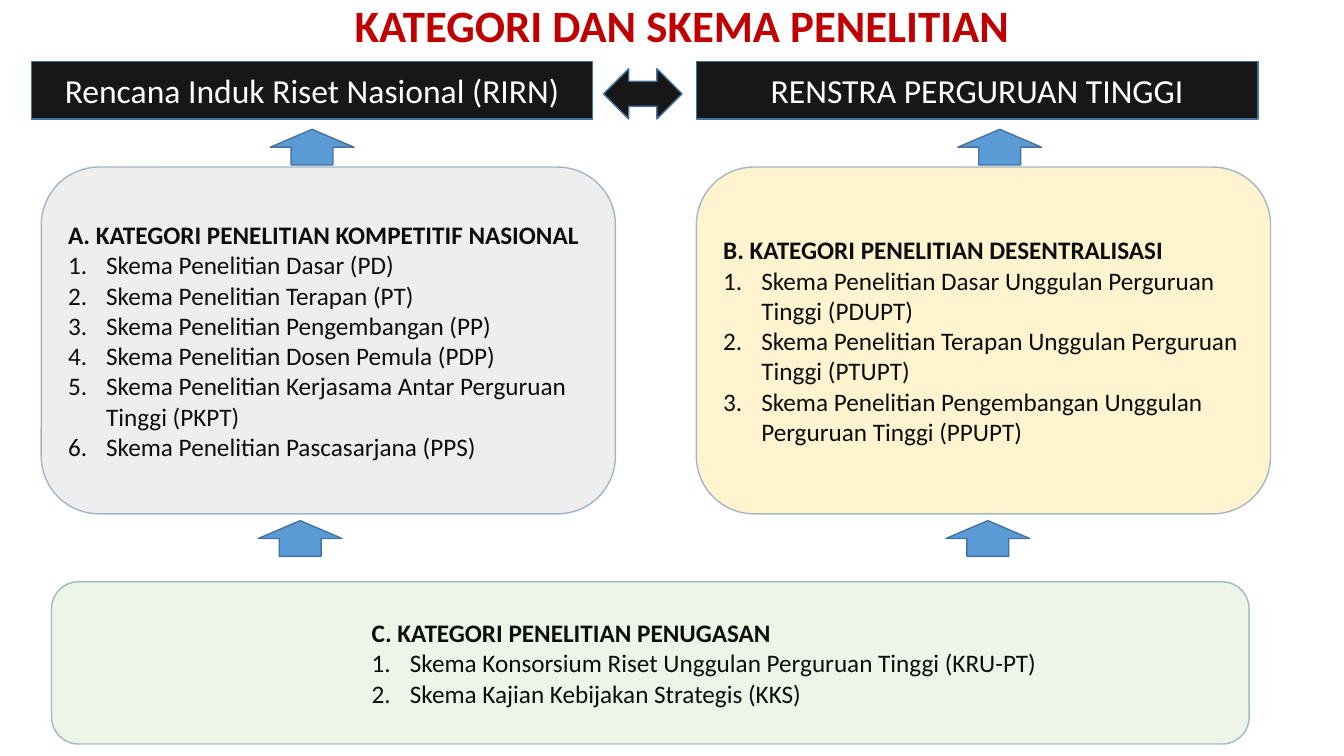
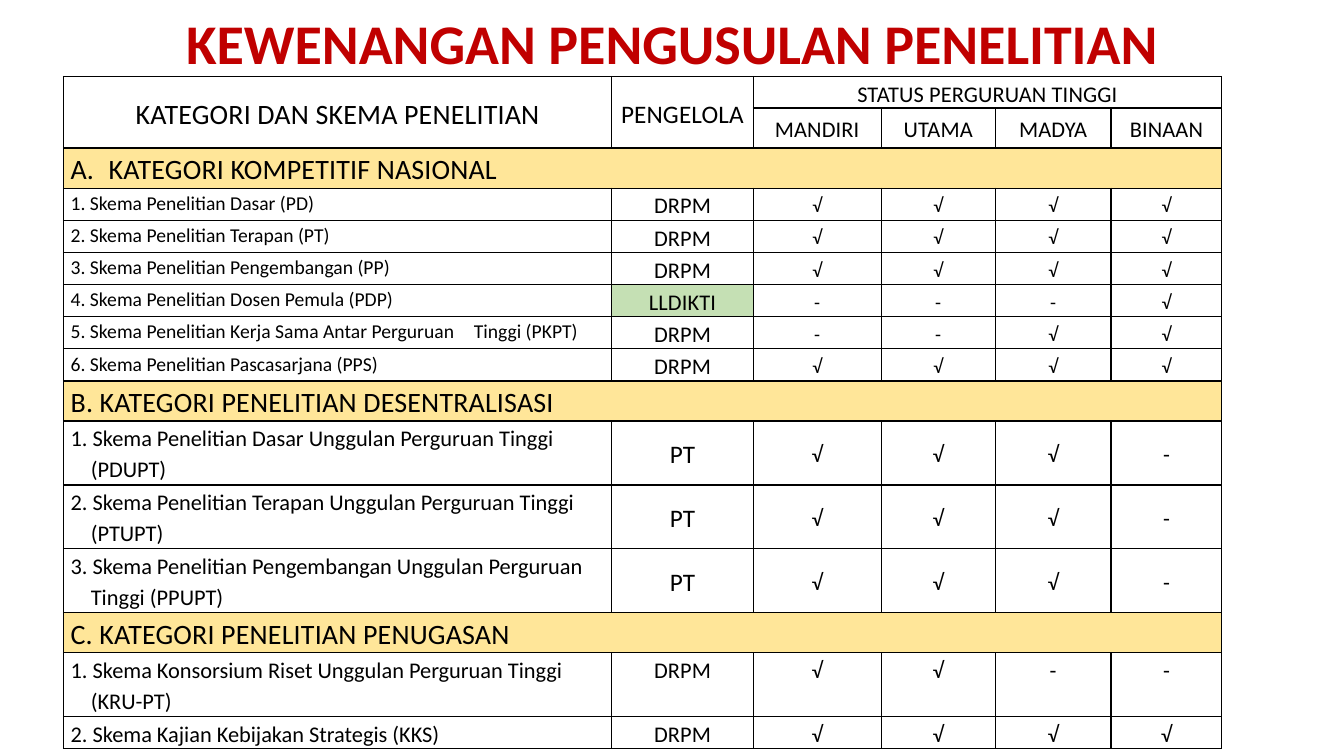
from lxml.etree import SubElement
from pptx import Presentation
from pptx.dml.color import RGBColor
from pptx.enum.shapes import MSO_SHAPE
from pptx.enum.text import MSO_ANCHOR, PP_ALIGN
from pptx.oxml.ns import qn
from pptx.util import Cm, Pt

FONT = "Calibri"
COLORS = {
    "title": "C00000", "black": "000000", "ink": "0D0D0D", "white": "FFFFFF",
    "plan": "181717", "outline": "43739E", "card_outline": "41719C", "arrow": "5B9BD5",
    "competitive": "C9C9C9", "decentralised": "FFD966", "assigned": "C5E0B4",
    "category": "FFE699",
}
LIST_INDENT = 0.96

COMPETITIVE = [
    "Skema Penelitian Dasar (PD)",
    "Skema Penelitian Terapan (PT)",
    "Skema Penelitian Pengembangan (PP)",
    "Skema Penelitian Dosen Pemula (PDP)",
    "Skema Penelitian Kerjasama Antar Perguruan Tinggi (PKPT)",
    "Skema Penelitian Pascasarjana (PPS)",
]
DECENTRALISED = [
    "Skema Penelitian Dasar Unggulan Perguruan Tinggi (PDUPT)",
    "Skema Penelitian Terapan Unggulan Perguruan Tinggi (PTUPT)",
    "Skema Penelitian Pengembangan Unggulan Perguruan Tinggi (PPUPT)",
]
ASSIGNED = [
    "Skema Konsorsium Riset Unggulan Perguruan Tinggi (KRU-PT)",
    "Skema Kajian Kebijakan Strategis (KKS)",
]
JOINT_SCHEME = "Skema Penelitian Kerja Sama Antar Perguruan\tTinggi (PKPT)"

CATEGORIES = [
    dict(heading="KATEGORI KOMPETITIF NASIONAL", numbering="alphaUcPeriod",
         sizes=(14, 16, 14), hanging=0, anchor=MSO_ANCHOR.MIDDLE,
         schemes=COMPETITIVE[:4] + [JOINT_SCHEME] + COMPETITIVE[5:],
         managers=["DRPM"] * 3 + ["LLDIKTI"] + ["DRPM"] * 2,
         marks=["√√√√"] * 3 + ["---√", "--√√", "√√√√"],
         heights=[0.81] * 6),
    dict(heading="B. KATEGORI PENELITIAN DESENTRALISASI", numbering=None,
         sizes=(16, 18, 16), hanging=0.51, anchor=MSO_ANCHOR.MIDDLE,
         schemes=DECENTRALISED, managers=["PT"] * 3, marks=["√√√-"] * 3,
         heights=[1.61] * 3),
    dict(heading="C. KATEGORI PENELITIAN PENUGASAN", numbering=None,
         sizes=(16, 16, 16), hanging=0.51, anchor=MSO_ANCHOR.TOP,
         schemes=ASSIGNED, managers=["DRPM"] * 2, marks=["√√--", "√√√√"],
         heights=[1.61, 0.81]),
]


def rgb(name):
    return RGBColor.from_string(COLORS[name])


def add_text(frame, text, size=18, color="ink", bold=False, align=PP_ALIGN.LEFT,
             line_spacing=None, left=0, hanging=0, numbering=None, tab=None, tracking=0):
    paragraph = frame.paragraphs[0]
    if paragraph.runs:
        paragraph = frame.add_paragraph()
    paragraph.alignment = align
    if line_spacing:
        paragraph.line_spacing = line_spacing
    properties = paragraph._p.get_or_add_pPr()
    properties.set("marL", str(Cm(left + hanging)))
    properties.set("indent", str(-Cm(hanging)))
    if numbering:
        SubElement(properties, qn("a:buFont"), typeface="+mj-lt")
        SubElement(properties, qn("a:buAutoNum"), type=numbering)
    if tab:
        tabs = SubElement(properties, qn("a:tabLst"))
        SubElement(tabs, qn("a:tab"), pos=str(Cm(tab)), algn="l")
    run = paragraph.add_run()
    run.text = text
    run.font.name = FONT
    run.font.size = Pt(size)
    run.font.bold = bold
    run.font.color.rgb = rgb(color)
    if tracking:
        run._r.get_or_add_rPr().set("spc", str(tracking))


def set_opacity(fill_parent, percent):
    color = fill_parent.find(qn("a:solidFill")).find(qn("a:srgbClr"))
    SubElement(color, qn("a:alpha"), val=str(percent * 1000))


def add_block(slide, preset, box, fill, outline="outline"):
    block = slide.shapes.add_shape(preset, *map(Cm, box))
    block.shadow.inherit = False
    block.fill.solid()
    block.fill.fore_color.rgb = rgb(fill)
    block.line.color.rgb = rgb(outline)
    block.line.width = Pt(1)
    block.text_frame.word_wrap = True
    block.text_frame.vertical_anchor = MSO_ANCHOR.MIDDLE
    return block


def add_title(slide, box, text, size):
    frame = slide.shapes.add_textbox(*map(Cm, box)).text_frame
    frame.word_wrap = True
    add_text(frame, text, size=size, color="title", bold=True,
             align=PP_ALIGN.CENTER, line_spacing=0.9)


def add_category_card(slide, box, fill, heading, schemes, left=0):
    card = add_block(slide, MSO_SHAPE.ROUNDED_RECTANGLE, box, fill, "card_outline")
    set_opacity(card._element.spPr, 30)
    set_opacity(card.line._ln, 47)
    add_text(card.text_frame, heading, bold=True, left=left)
    for scheme in schemes:
        add_text(card.text_frame, scheme, left=left, hanging=LIST_INDENT,
                 numbering="arabicPeriod")


def add_plan_column(slide, box, plan, card_left, arrow_left, fill, heading, schemes):
    left, top, width, height = box
    header = add_block(slide, MSO_SHAPE.RECTANGLE, (left, top, width, 1.45), "plan")
    add_text(header.text_frame, plan, size=24, color="white", align=PP_ALIGN.CENTER)
    add_category_card(slide, (left + card_left, top + 2.66, 14.47, 8.74),
                      fill, heading, schemes)
    for shift, arrow_top in ((0.3, top + 1.71), (0, top + height - 0.9)):
        add_block(slide, MSO_SHAPE.UP_ARROW,
                  (left + arrow_left + shift, arrow_top, 2.11, 0.9), "arrow")


def build_scheme_slide(slide):
    add_title(slide, (2.59, -0.03, 29.21, 1.24), "KATEGORI DAN SKEMA PENELITIAN", 32)
    add_category_card(slide, (1.3, 14.66, 30.18, 4.09), "assigned",
                      "C. KATEGORI PENELITIAN PENUGASAN", ASSIGNED, left=7.62)
    add_plan_column(slide, (0.79, 1.55, 14.15, 12.47),
                    "Rencana Induk Riset Nasional (RIRN)", 0.25, 5.72, "competitive",
                    "A. KATEGORI PENELITIAN KOMPETITIF NASIONAL", COMPETITIVE)
    add_plan_column(slide, (17.55, 1.55, 14.15, 12.47),
                    "RENSTRA PERGURUAN TINGGI", 0, 6.29, "decentralised",
                    "B. KATEGORI PENELITIAN DESENTRALISASI", DECENTRALISED)
    add_block(slide, MSO_SHAPE.LEFT_RIGHT_ARROW, (15.21, 1.73, 1.98, 1.27), "plan")


def format_cell(cell):
    cell.margin_left = cell.margin_right = Cm(0.18)
    cell.margin_top = cell.margin_bottom = 0
    properties = cell._tc.get_or_add_tcPr()
    for side in ("a:lnL", "a:lnR", "a:lnT", "a:lnB"):
        border = SubElement(properties, qn(side), w=str(Pt(1)))
        line_fill = SubElement(border, qn("a:solidFill"))
        SubElement(line_fill, qn("a:srgbClr"), val=COLORS["black"])
    cell.fill.background()


def fill_cell(cell, text, size, anchor=MSO_ANCHOR.MIDDLE, fill=None,
              align=PP_ALIGN.CENTER, tracking=10, **text_format):
    cell.vertical_anchor = anchor
    if fill:
        cell.fill.solid()
        cell.fill.fore_color.rgb = rgb(fill)
    add_text(cell.text_frame, text, size=size, color="black", align=align,
             line_spacing=1.15, tracking=tracking, **text_format)


def add_table_header(table):
    for column, (label, size) in enumerate(
            (("KATEGORI DAN SKEMA PENELITIAN", 20), ("PENGELOLA", 18))):
        table.cell(0, column).merge(table.cell(1, column))
        fill_cell(table.cell(0, column), label, size)
    table.cell(0, 2).merge(table.cell(0, 5))
    fill_cell(table.cell(0, 2), "STATUS PERGURUAN TINGGI", 16)
    for column, status in enumerate(("MANDIRI", "UTAMA", "MADYA", "BINAAN"), 2):
        fill_cell(table.cell(1, column), status, 16)


def add_category_rows(table, row, category):
    table.cell(row, 0).merge(table.cell(row, 5))
    numbering = category["numbering"]
    fill_cell(table.cell(row, 0), category["heading"], 20, MSO_ANCHOR.TOP, "category",
              PP_ALIGN.LEFT, numbering=numbering, hanging=LIST_INDENT if numbering else 0)
    scheme_size, manager_size, mark_size = category["sizes"]
    anchor = category["anchor"]
    entries = zip(category["schemes"], category["managers"], category["marks"])
    for number, (scheme, manager, marks) in enumerate(entries, 1):
        fill_cell(table.cell(row + number, 0), f"{number}. {scheme}", scheme_size,
                  MSO_ANCHOR.TOP, align=PP_ALIGN.LEFT, tracking=0,
                  hanging=category["hanging"], tab=10.12 if "\t" in scheme else None)
        fill_cell(table.cell(row + number, 1), manager, manager_size, anchor,
                  "assigned" if manager == "LLDIKTI" else None)
        for column, mark in enumerate(marks, 2):
            fill_cell(table.cell(row + number, column), mark, mark_size, anchor)


def add_authority_table(slide, box):
    heights = [0.79, 1.01]
    for category in CATEGORIES:
        heights += [1.01] + category["heights"]
    widths = (13.82, 3.56, 3.23, 2.87, 2.92, 2.79)
    table = slide.shapes.add_table(len(heights), len(widths), *map(Cm, box)).table
    table.first_row = table.horz_banding = False
    for column, width in zip(table.columns, widths):
        column.width = Cm(width)
    for row, height in zip(table.rows, heights):
        row.height = Cm(height)
    for cell in table.iter_cells():
        format_cell(cell)
    add_table_header(table)
    first_row = 2
    for category in CATEGORIES:
        add_category_rows(table, first_row, category)
        first_row += 1 + len(category["schemes"])


def build_authority_slide(slide):
    add_title(slide, (0, 0.28, 33.87, 1.02), "KEWENANGAN PENGUSULAN PENELITIAN", 40)
    add_authority_table(slide, (1.6, 1.93, 29.19, 16.95))


def main():
    presentation = Presentation()
    presentation.slide_width = Cm(33.87)
    presentation.slide_height = Cm(19.05)
    blank = presentation.slide_layouts[6]
    for build in (build_scheme_slide, build_authority_slide):
        build(presentation.slides.add_slide(blank))
    presentation.save("out.pptx")


if __name__ == "__main__":
    main()
